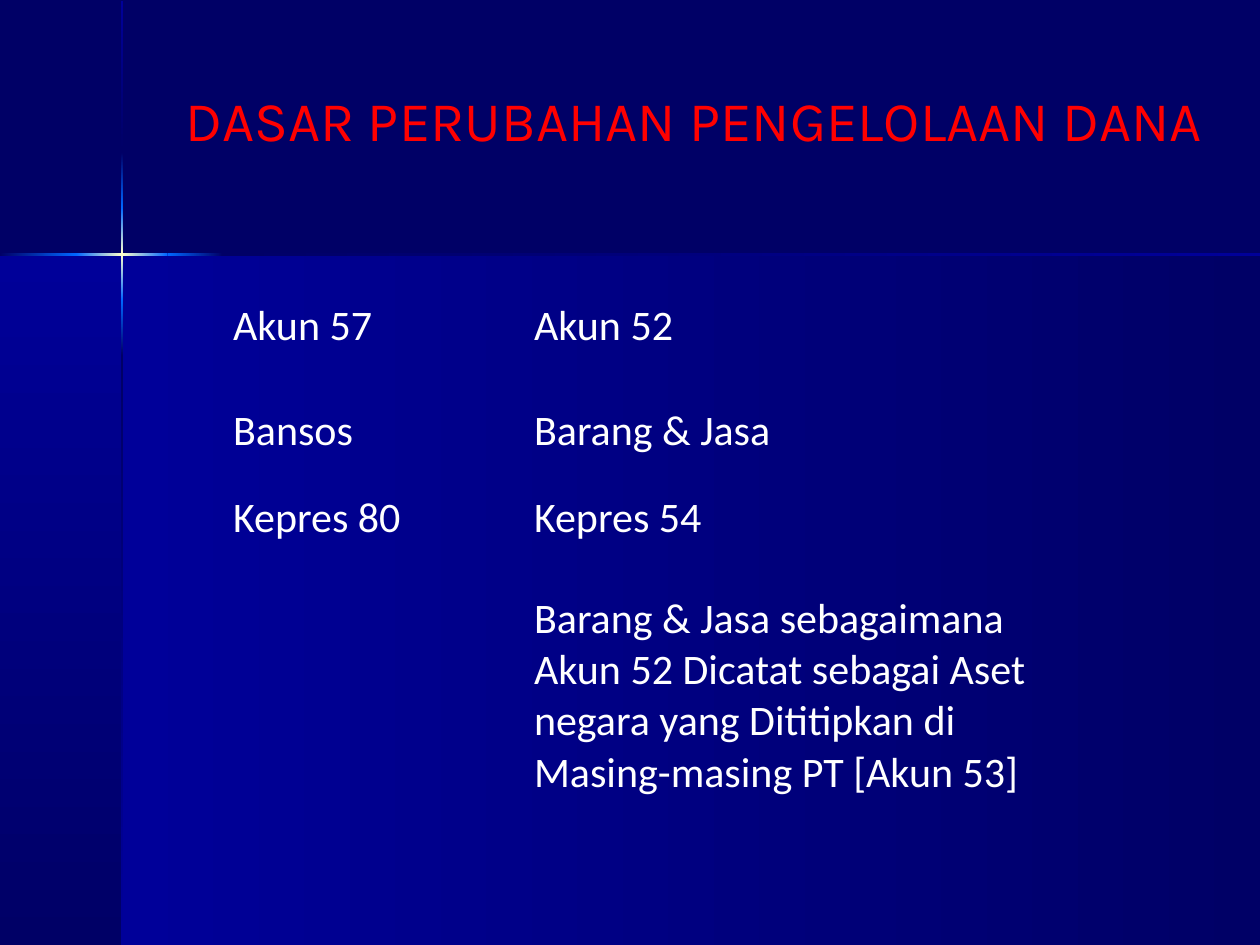
import dataclasses
import itertools

import lxml.etree
import pptx
import pptx.dml.color
import pptx.enum.shapes
import pptx.enum.text
import pptx.oxml.ns
import pptx.util

Pt = pptx.util.Pt
qn = pptx.oxml.ns.qn


@dataclasses.dataclass(frozen=True)
class Theme:
    night: str = "000066"
    navy: str = "000099"
    glow: str = "0066FF"
    spark: str = "FFFFCC"
    heading: str = "FF0000"
    body: str = "FFFFFF"
    heading_font: str = "Karla"
    body_font: str = "Calibri"
    heading_size: int = 32
    body_size: int = 24


def write_text(frame, text, *, font, size, color, align=None, indent=0):
    frame.word_wrap = True
    paragraph = frame.paragraphs[0]
    paragraph.alignment = align
    if indent:
        properties = paragraph._p.get_or_add_pPr()
        properties.set("marL", str(Pt(indent)))
        properties.set("indent", "0")
    run = paragraph.add_run()
    run.text = text
    run.font.name = font
    run.font.size = Pt(size)
    run.font.color.rgb = pptx.dml.color.RGBColor.from_string(color)


class SlideBuilder:
    NO_GRID_STYLE = "{2D5ABB26-0587-4C30-8999-92F81FD0307C}"

    def __init__(self, slide, theme):
        self.slide = slide
        self.theme = theme

    def background(self, color):
        fill = self.slide.background.fill
        fill.solid()
        fill.fore_color.rgb = pptx.dml.color.RGBColor.from_string(color)

    def gradient_panel(self, left, top, width, height, colors, downward=False):
        panel = self.slide.shapes.add_shape(
            pptx.enum.shapes.MSO_SHAPE.RECTANGLE,
            Pt(left), Pt(top), Pt(width), Pt(height))
        panel.shadow.inherit = False
        panel.line.fill.background()
        panel.fill.gradient()
        panel.fill.gradient_angle = 270 if downward else 0
        # Evenly spaced colour stops
        stops = panel._element.spPr.find(qn("a:gradFill")).find(qn("a:gsLst"))
        for stop in list(stops):
            stops.remove(stop)
        for index, color in enumerate(colors):
            position = 100000 * index // (len(colors) - 1)
            stop = lxml.etree.SubElement(stops, qn("a:gs"), pos=str(position))
            lxml.etree.SubElement(stop, qn("a:srgbClr"), val=color)

    def beam(self, cuts, blends, center, thickness, downward=False):
        edge = center - thickness / 2
        for (start, end), colors in zip(itertools.pairwise(cuts), blends):
            if downward:
                box = (edge, start, thickness, end - start)
            else:
                box = (start, edge, end - start, thickness)
            self.gradient_panel(*box, colors, downward)

    def title(self, text, left, top, width, height):
        heading = self.slide.shapes.title
        heading.left, heading.top = Pt(left), Pt(top)
        heading.width, heading.height = Pt(width), Pt(height)
        frame = heading.text_frame
        frame.auto_size = pptx.enum.text.MSO_AUTO_SIZE.SHAPE_TO_FIT_TEXT
        frame.vertical_anchor = pptx.enum.text.MSO_ANCHOR.TOP
        write_text(frame, text, font=self.theme.heading_font,
                   size=self.theme.heading_size, color=self.theme.heading,
                   align=pptx.enum.text.PP_ALIGN.CENTER, indent=7.2)

    def table(self, rows, left, top, widths, heights):
        table = self.slide.shapes.add_table(
            len(rows), len(widths), Pt(left), Pt(top),
            Pt(sum(widths)), Pt(sum(heights))).table
        table.first_row = False
        table.horz_banding = False
        style = table._tbl.tblPr.find(qn("a:tableStyleId"))
        style.text = self.NO_GRID_STYLE
        for column, width in zip(table.columns, widths):
            column.width = Pt(width)
        for row, height, texts in zip(table.rows, heights, rows):
            row.height = Pt(height)
            for cell, text in zip(row.cells, texts):
                cell.fill.background()
                if text:
                    write_text(cell.text_frame, text, font=self.theme.body_font,
                               size=self.theme.body_size, color=self.theme.body)


def main():
    deck = pptx.Presentation()
    deck.slide_width, deck.slide_height = Pt(720), Pt(540)
    theme = Theme()
    page = SlideBuilder(deck.slides.add_slide(deck.slide_layouts[5]), theme)

    # Backdrop: two panels below the crossing of the beams
    cross_x, cross_y = 69.8, 145.4
    page.background(theme.night)
    fade = (theme.navy, theme.night)
    page.gradient_panel(cross_x, cross_y, 720 - cross_x, 540 - cross_y, fade)
    page.gradient_panel(0, cross_y, cross_x, 540 - cross_y, fade, downward=True)

    # Light beams, brightest where they cross
    flare = [(theme.night, theme.glow),
             (theme.glow, theme.spark, theme.glow),
             (theme.glow, theme.night),
             (theme.night, theme.navy)]
    page.beam((0, 43.5, 95.8, 127.4, 720), flare, cross_y, 1.4)
    page.beam((0.7, 87.1, 118.8, 171.4, 203, 540), [fade] + flare,
              cross_x, 1.4, downward=True)

    # Old and new rules side by side
    page.table(
        [("Akun 57", "Akun 52"),
         ("Bansos", "Barang & Jasa"),
         ("Kepres 80", "Kepres 54"),
         ("", "Barang & Jasa sebagaimana Akun 52 Dicatat sebagai Aset "
              "negara yang Dititipkan di Masing-masing PT [Akun 53]")],
        left=126, top=168, widths=(172, 334.5), heights=(60, 50, 57.6, 156.4))

    page.title("DASAR PERUBAHAN PENGELOLAAN DANA", 84.2, 45.4, 617.8, 46)
    deck.save("out.pptx")


if __name__ == "__main__":
    main()
